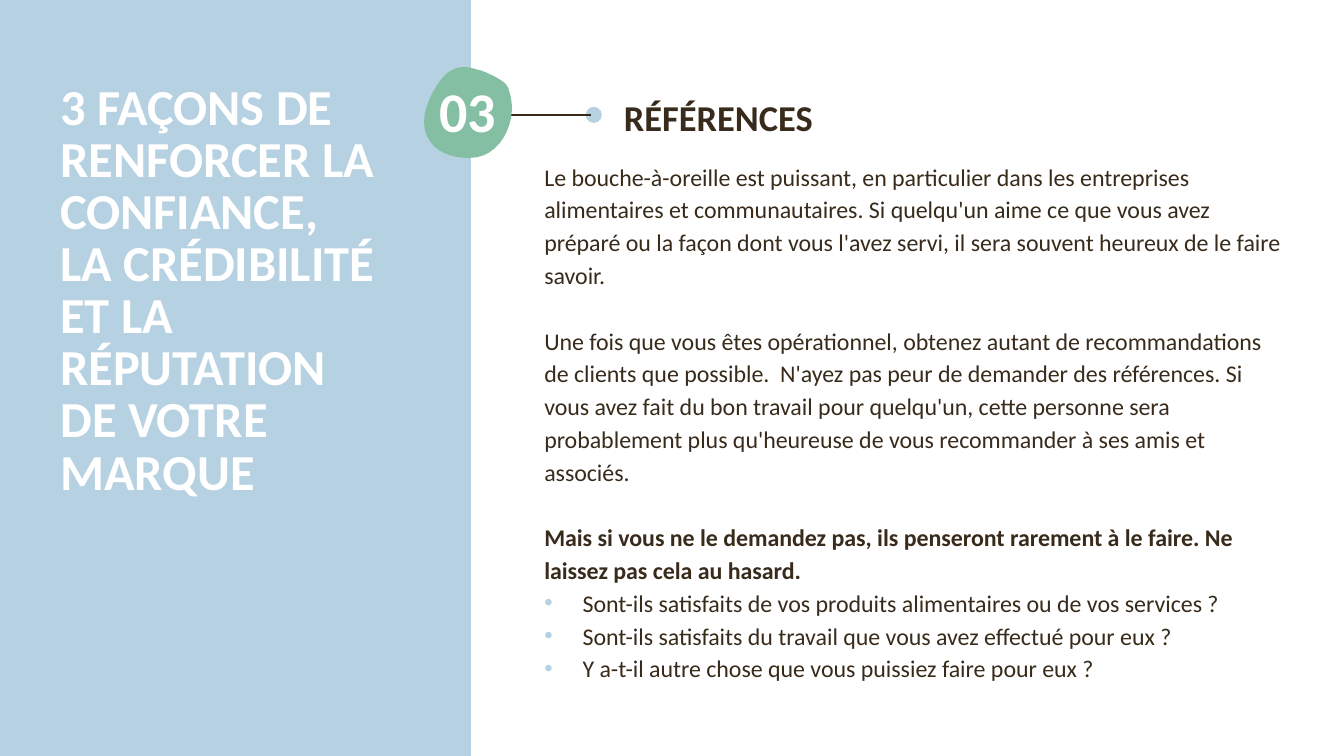
"""Build the slide on customer references as a way to build trust in a brand."""
from dataclasses import dataclass

from lxml.etree import SubElement
from pptx import Presentation
from pptx.dml.color import RGBColor
from pptx.enum.shapes import MSO_CONNECTOR, MSO_SHAPE
from pptx.enum.text import MSO_ANCHOR, PP_ALIGN
from pptx.oxml.ns import qn
from pptx.shapes.autoshape import Shape
from pptx.slide import Slide
from pptx.text.text import _Paragraph
from pptx.util import Emu, Pt

EMU_PER_PX = 9144
COLORS = {"sky": "B6D1E1", "leaf": "84BFA4", "bark": "382B1B", "white": "FFFFFF"}
CURVE_STEPS = 12
BULLET_INDENT = 38
BODY_LINE = Pt(23.4)

Point = tuple[float, float]


@dataclass(frozen=True)
class Panel:
    preset: MSO_SHAPE
    box: tuple[int, int, int, int]


@dataclass(frozen=True)
class Line:
    text: str
    bold: bool = False
    bullet: bool = False
    gap_before: bool = False


@dataclass(frozen=True)
class TextBlock:
    box: tuple[int, int, int, int]
    size: float
    color: str
    lines: tuple[Line, ...]
    spacing: float | Pt = 1.0
    alignment: PP_ALIGN = PP_ALIGN.LEFT


PANELS = (
    Panel(MSO_SHAPE.RECTANGLE, (0, 0, 467, 750)),
    Panel(MSO_SHAPE.OVAL, (581, 106, 16, 16)),
)
PEBBLE_START = (473, 69)
PEBBLE_CURVES = (
    ((462, 65), (450, 65), (440, 76)),
    ((431, 86), (423, 102), (421, 115)),
    ((417, 146), (445, 160), (473, 156)),
    ((500, 151), (514, 116), (505, 90)),
    ((503, 82), (496, 79), (489, 75)),
    ((484, 73), (479, 70), (473, 69)),
)
TEXT_BLOCKS = (
    TextBlock((415, 79, 98, 59), 40, "white", (Line("03", bold=True),), 0.9, PP_ALIGN.CENTER),
    TextBlock((609, 89, 667, 54), 26, "bark", (Line("RÉFÉRENCES", bold=True),)),
    TextBlock(
        (50, 78, 334, 218), 36, "white",
        (Line("3 FAÇONS DE RENFORCER LA CONFIANCE, LA CRÉDIBILITÉ ET LA RÉPUTATION "
              "DE VOTRE MARQUE", bold=True),),
        Pt(37.2),
    ),
    TextBlock(
        (530, 152, 760, 547), 17.1, "bark",
        (
            Line("Le bouche-à-oreille est puissant, en particulier dans les entreprises "
                 "alimentaires et communautaires. Si quelqu'un aime ce que vous avez préparé "
                 "ou la façon dont vous l'avez servi, il sera souvent heureux de le faire savoir."),
            Line("Une fois que vous êtes opérationnel, obtenez autant de recommandations de "
                 "clients que possible.  N'ayez pas peur de demander des références. Si vous "
                 "avez fait du bon travail pour quelqu'un, cette personne sera probablement "
                 "plus qu'heureuse de vous recommander à ses amis et associés.", gap_before=True),
            Line("Mais si vous ne le demandez pas, ils penseront rarement à le faire. Ne "
                 "laissez pas cela au hasard.", bold=True, gap_before=True),
            Line("Sont-ils satisfaits de vos produits alimentaires ou de vos services ?", bullet=True),
            Line("Sont-ils satisfaits du travail que vous avez effectué pour eux ?", bullet=True),
            Line("Y a-t-il autre chose que vous puissiez faire pour eux ?", bullet=True),
        ),
        BODY_LINE,
    ),
)


def px(length: float) -> Emu:
    return Emu(round(length * EMU_PER_PX))


def rgb(name: str) -> RGBColor:
    return RGBColor.from_string(COLORS[name])


def paint(shape: Shape, color: str) -> None:
    shape.shadow.inherit = False
    shape.fill.solid()
    shape.fill.fore_color.rgb = rgb(color)
    shape.line.fill.background()


def add_panel(slide: Slide, panel: Panel) -> None:
    paint(slide.shapes.add_shape(panel.preset, *map(px, panel.box)), "sky")


def add_stem(slide: Slide) -> None:
    connector = slide.shapes.add_connector(
        MSO_CONNECTOR.STRAIGHT, px(586), px(114), px(453), px(114))
    connector.line.color.rgb = rgb("bark")
    connector.line.width = Pt(1.5)
    SubElement(connector.element.spPr, qn("a:effectLst"))


def curve_point(corners: tuple[Point, ...], t: float) -> Point:
    weights = ((1 - t) ** 3, 3 * t * (1 - t) ** 2, 3 * t * t * (1 - t), t ** 3)
    x, y = (sum(w * corner[axis] for w, corner in zip(weights, corners)) for axis in (0, 1))
    return px(x), px(y)


def add_pebble(slide: Slide) -> None:
    start = PEBBLE_START
    points: list[Point] = []
    for curve in PEBBLE_CURVES:
        points += [curve_point((start, *curve), step / CURVE_STEPS)
                   for step in range(1, CURVE_STEPS + 1)]
        start = curve[-1]
    builder = slide.shapes.build_freeform(*map(px, PEBBLE_START))
    builder.add_line_segments(points, close=True)
    paint(builder.convert_to_shape(), "leaf")


def add_bullet(paragraph: _Paragraph) -> None:
    properties = paragraph._p.get_or_add_pPr()
    properties.set("marL", str(px(BULLET_INDENT)))
    properties.set("indent", str(-px(BULLET_INDENT)))
    color = SubElement(properties, qn("a:buClr"))
    SubElement(color, qn("a:srgbClr"), val=COLORS["sky"])
    SubElement(properties, qn("a:buFont"), typeface="Arial")
    SubElement(properties, qn("a:buChar"), char="•")


def add_text(slide: Slide, block: TextBlock) -> None:
    frame = slide.shapes.add_textbox(*map(px, block.box)).text_frame
    frame.word_wrap = True
    frame.vertical_anchor = MSO_ANCHOR.TOP
    for index, line in enumerate(block.lines):
        paragraph = frame.add_paragraph() if index else frame.paragraphs[0]
        layout = {"alignment": block.alignment, "line_spacing": block.spacing}
        if line.gap_before:
            layout["space_before"] = BODY_LINE
        for name, value in layout.items():
            setattr(paragraph, name, value)
        if line.bullet:
            add_bullet(paragraph)
        run = paragraph.add_run()
        run.text = line.text
        for name, value in {"name": "Calibri", "size": Pt(block.size), "bold": line.bold}.items():
            setattr(run.font, name, value)
        run.font.color.rgb = rgb(block.color)


def main() -> None:
    presentation = Presentation()
    presentation.slide_width, presentation.slide_height = px(1333), px(750)
    slide = presentation.slides.add_slide(presentation.slide_layouts[6])
    add_stem(slide)
    for panel in PANELS:
        add_panel(slide, panel)
    slide.shapes._spTree.append(slide.shapes[0].element)
    add_pebble(slide)
    for block in TEXT_BLOCKS:
        add_text(slide, block)
    presentation.save("out.pptx")


if __name__ == "__main__":
    main()
